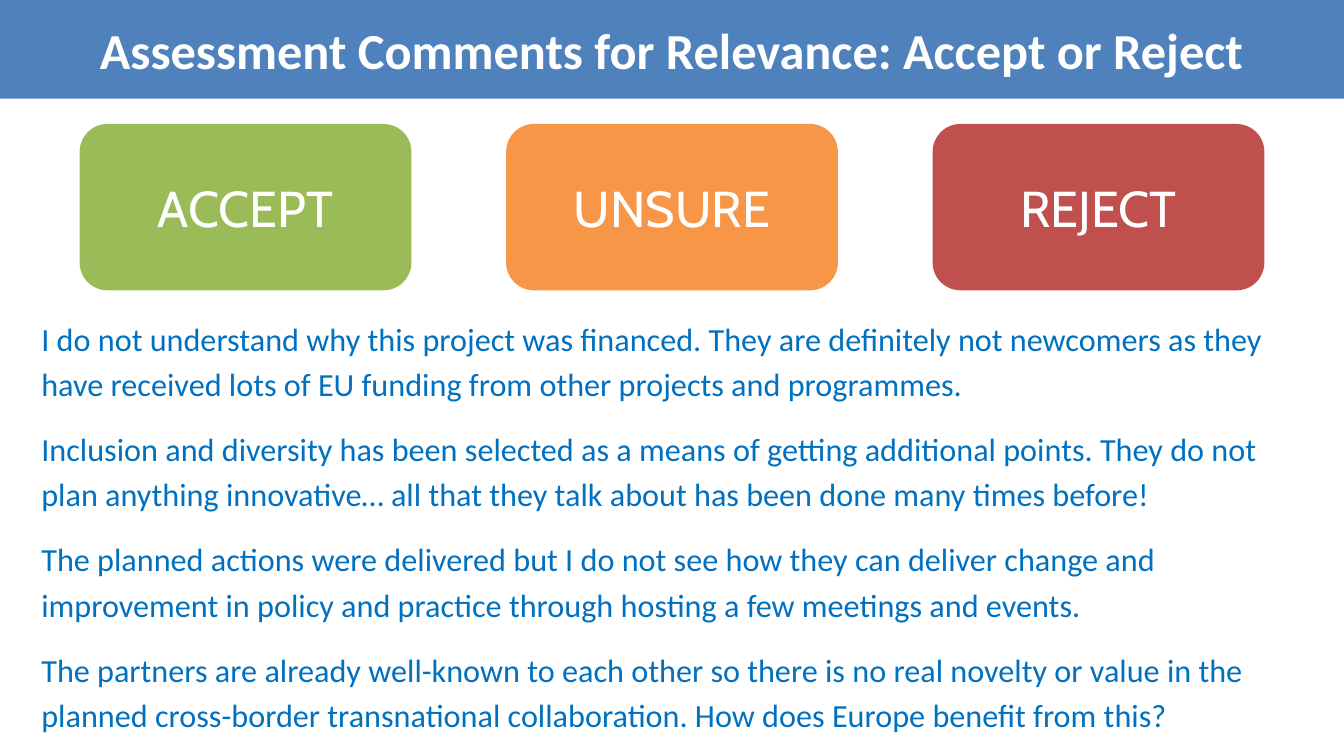
from dataclasses import dataclass

from lxml.etree import SubElement
from pptx import Presentation
from pptx.dml.color import RGBColor
from pptx.enum.shapes import MSO_SHAPE as Preset
from pptx.enum.text import MSO_ANCHOR as Anchor, MSO_AUTO_SIZE as AutoSize, PP_ALIGN as Align
from pptx.oxml.ns import qn
from pptx.util import Inches, Pt


@dataclass(frozen=True)
class Theme:
    banner: str = "4F81BD"
    accept: str = "9BBB59"
    unsure: str = "F79646"
    reject: str = "C0504D"
    light: str = "FFFFFF"
    comment: str = "0070C0"
    body_font: str = "Calibri"
    card_font: str = "Cabin"
    heading_size: float = 36
    comment_size: float = 23


@dataclass(frozen=True)
class Card:
    label: str
    color: str


THEME = Theme()
SLIDE_WIDTH, SLIDE_HEIGHT = 13.33, 7.5
CARD_LEFT, CARD_TOP, CARD_WIDTH, CARD_HEIGHT = 0.79, 1.23, 3.29, 1.65
CARD_GAP = (SLIDE_WIDTH - 2 * CARD_LEFT - 3 * CARD_WIDTH) / 2

TITLE = "Assessment Comments for Relevance: Accept or Reject"
CARDS = [
    Card("ACCEPT", THEME.accept),
    Card("UNSURE", THEME.unsure),
    Card("REJECT", THEME.reject),
]
COMMENTS = [
    "I do not understand why this project was financed. They are definitely not "
    "newcomers as they have received lots of EU funding from other projects and programmes.",
    "Inclusion and diversity has been selected as a means of getting additional points. "
    "They do not plan anything innovative… all that they talk about has been done many "
    "times before!",
    "The planned actions were delivered but I do not see how they can deliver change and "
    "improvement in policy and practice through hosting a few meetings and events.",
    "The partners are already well-known to each other so there is no real novelty or value "
    "in the planned cross-border transnational collaboration. How does Europe benefit from this?",
]


def write_text(text_frame, lines: list[str], *, font: str, size: float, color: str,
               bold: bool = False, align=Align.LEFT, line_spacing: float = 1.0,
               space_after: float = 0) -> None:
    for index, line in enumerate(lines):
        paragraph = text_frame.paragraphs[0] if index == 0 else text_frame.add_paragraph()
        paragraph.alignment = align
        paragraph.line_spacing = line_spacing
        paragraph.space_before = Pt(0)
        paragraph.space_after = Pt(space_after)
        run = paragraph.add_run()
        run.text = line
        run.font.name = font
        run.font.size = Pt(size)
        run.font.bold = bold
        run.font.color.rgb = RGBColor.from_string(color)


def fill_shape(shape, color: str) -> None:
    shape.fill.solid()
    shape.fill.fore_color.rgb = RGBColor.from_string(color)
    shape.line.fill.background()


def format_title(slide) -> None:
    title = slide.shapes.title
    title.left, title.top = Inches(0), Inches(0)
    title.width, title.height = Inches(SLIDE_WIDTH), Inches(0.98)
    fill_shape(title, THEME.banner)
    title.text_frame.word_wrap = True
    title.text_frame.auto_size = AutoSize.NONE
    title.text_frame.vertical_anchor = Anchor.MIDDLE
    write_text(title.text_frame, [TITLE], font=THEME.body_font, size=THEME.heading_size,
               color=THEME.light, bold=True, align=Align.CENTER)


def add_card(slide, card: Card, left: float) -> None:
    shape = slide.shapes.add_shape(Preset.ROUNDED_RECTANGLE, Inches(left), Inches(CARD_TOP),
                                   Inches(CARD_WIDTH), Inches(CARD_HEIGHT))
    shape.shadow.inherit = False
    fill_shape(shape, card.color)
    shape.text_frame.vertical_anchor = Anchor.MIDDLE
    write_text(shape.text_frame, [card.label], font=THEME.card_font,
               size=THEME.heading_size, color=THEME.light, align=Align.CENTER)


def set_borders(cell, color: str) -> None:
    properties = cell._tc.get_or_add_tcPr()
    for side in ("a:lnL", "a:lnR", "a:lnT", "a:lnB"):
        line = SubElement(properties, qn(side), w=str(Pt(1)))
        fill = SubElement(line, qn("a:solidFill"))
        SubElement(fill, qn("a:srgbClr"), val=color)


def add_comments(slide) -> None:
    table = slide.shapes.add_table(1, 1, Inches(0.29), Inches(3.12),
                                   Inches(12.84), Inches(4.08)).table
    table.first_row = False
    table.horz_banding = False
    cell = table.cell(0, 0)
    cell.margin_left = cell.margin_right = Inches(0.12)
    cell.margin_top = cell.margin_bottom = Inches(0)
    set_borders(cell, THEME.light)
    cell.fill.background()
    write_text(cell.text_frame, COMMENTS, font=THEME.body_font, size=THEME.comment_size,
               color=THEME.comment, line_spacing=1.15, space_after=14)


def main() -> None:
    presentation = Presentation()
    presentation.slide_width = Inches(SLIDE_WIDTH)
    presentation.slide_height = Inches(SLIDE_HEIGHT)
    title_only = presentation.slide_layouts[5]
    slide = presentation.slides.add_slide(title_only)

    # Title banner
    format_title(slide)

    # Comments to assess
    add_comments(slide)

    # Verdict cards, evenly spaced
    for index, card in enumerate(CARDS):
        add_card(slide, card, CARD_LEFT + index * (CARD_WIDTH + CARD_GAP))

    presentation.save("out.pptx")


if __name__ == "__main__":
    main()
